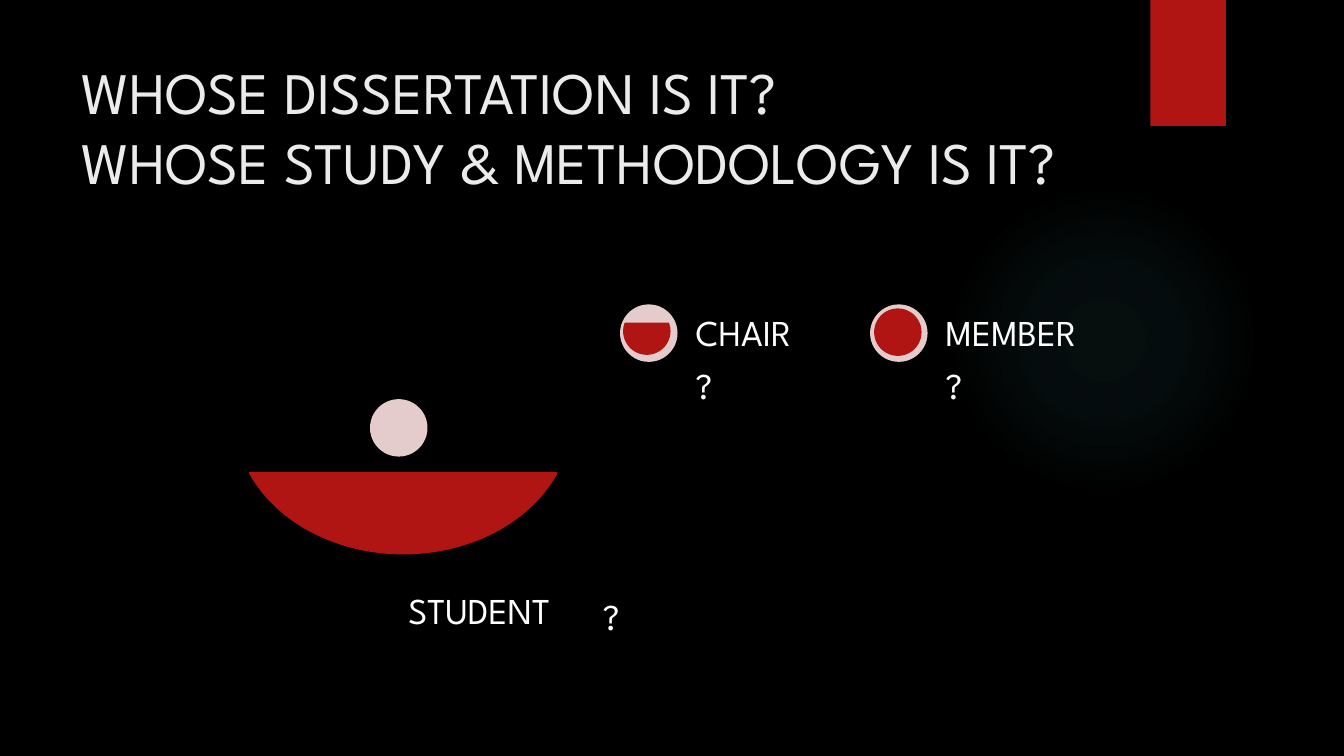
from dataclasses import dataclass

from lxml.etree import SubElement
from pptx import Presentation
from pptx.dml.color import RGBColor
from pptx.enum.shapes import MSO_SHAPE
from pptx.enum.text import MSO_ANCHOR
from pptx.oxml.ns import qn
from pptx.util import Inches, Pt


@dataclass(frozen=True)
class Theme:
    """Colours, font and type sizes of the slide."""
    back: str = "000000"
    red: str = "B01513"
    pale: str = "E4CCCC"
    glow: str = "50B9C1"
    title: str = "EBEBEB"
    label: str = "FFFFFF"
    font: str = "League Spartan"
    large: int = 42
    small: int = 26


THEME = Theme()
DISC = 0.57


def add_form(slide, kind, box, fill, line=None):
    """Add a plain filled shape in the box."""
    form = slide.shapes.add_shape(kind, *map(Inches, box))
    form.shadow.inherit = False
    form.fill.solid()
    form.fill.fore_color.rgb = RGBColor.from_string(fill)
    if line:
        form.line.color.rgb = RGBColor.from_string(line)
        form.line.width = Pt(1.5)
    else:
        form.line.fill.background()
    return form


def add_text(slide, box, text, size, color):
    """Add a wrapped text box and return its frame."""
    frame = slide.shapes.add_textbox(*map(Inches, box)).text_frame
    frame.word_wrap = True
    frame.text = text
    for run in frame.paragraphs[0].runs:
        run.font.name = THEME.font
        run.font.size = Pt(size)
        run.font.color.rgb = RGBColor.from_string(color)
    return frame


def add_label(slide, box, text, anchor=MSO_ANCHOR.TOP):
    """Add a small label with tight insets."""
    frame = add_text(slide, box, text, THEME.small, THEME.label)
    frame.vertical_anchor = anchor
    frame.margin_left = frame.margin_right = Inches(0.07)
    frame.margin_top = frame.margin_bottom = Inches(0.07)
    para = frame.paragraphs[0]
    para.line_spacing = 0.9
    para.space_after = Pt(9)


def add_glow(slide, box):
    """Add the faint round glow behind the content."""
    form = add_form(slide, MSO_SHAPE.OVAL, box, THEME.glow)
    props = form._element.spPr
    solid = props.find(qn("a:solidFill"))
    grad = solid.makeelement(qn("a:gradFill"), rotWithShape="1")
    props.replace(solid, grad)
    stops = SubElement(grad, qn("a:gsLst"))
    for place, alpha in ((0, 7), (36, 6), (69, 0)):
        stop = SubElement(stops, qn("a:gs"), pos=str(place * 1000))
        color = SubElement(stop, qn("a:srgbClr"), val=THEME.glow)
        SubElement(color, qn("a:alpha"), val=str(alpha * 1000))
    path = SubElement(grad, qn("a:path"), path="circle")
    SubElement(path, qn("a:fillToRect"), l="50000", t="50000",
               r="50000", b="50000")


def add_frame(slide, box):
    """Set the backdrop, glow and red tab within the box."""
    left, top, width, _ = box
    slide.background.fill.solid()
    slide.background.fill.fore_color.rgb = RGBColor.from_string(THEME.back)
    add_glow(slide, (left + 9.41, top + 1.83, 3.08, 3.08))
    add_form(slide, MSO_SHAPE.RECTANGLE,
             (left + width - 1.92, top, 0.75, 1.25), THEME.red)


def add_role(slide, box, name, chord, arc, label, query):
    """Add a disc, its chord, a name and a question mark, set from the box."""
    left, top = box

    def shift(part):
        """Move a part by the corner of the box."""
        return left + part[0], top + part[1], part[2], part[3]

    add_form(slide, MSO_SHAPE.OVAL, (left, top, DISC, DISC), THEME.pale)
    form = add_form(slide, MSO_SHAPE.CHORD, shift(chord), THEME.red, THEME.red)
    form.adjustments[0], form.adjustments[1] = arc
    add_label(slide, shift(query), "?")
    add_label(slide, shift(label), name, MSO_ANCHOR.BOTTOM)


def main():
    """Build and save the slide."""
    deck = Presentation()
    deck.slide_width, deck.slide_height = Inches(13.33), Inches(7.5)
    slide = deck.slides.add_slide(deck.slide_layouts[6])
    add_frame(slide, (0, 0, 13.33, 7.5))
    add_text(slide, (0.71, 0.5, 10.29, 2.38),
             "WHOSE DISSERTATION IS IT?\vWHOSE STUDY & METHODOLOGY IS IT?",
             THEME.large, THEME.title)
    add_role(slide, (3.67, 3.96), "STUDENT", (-1.33, -1.14, 3.32, 2.67),
             (11.68, 96.32), (0.31, 1.81, 1.68, DISC), (2.24, 1.91, 1.58, 0.86))
    roles = (("CHAIR", 0.04, (204.32, 119.68)), ("MEMBER", 0.05, (162, 162)))
    for step, (name, inset, arc) in enumerate(roles):
        add_role(slide, (6.15 + 2.48 * step, 3.02), name,
                 (inset, inset, 0.45, 0.45), arc,
                 (0.68, 0, 1.68, DISC), (0.68, 0.56, 1.68, 2.39))
    deck.save("out.pptx")


if __name__ == "__main__":
    main()
